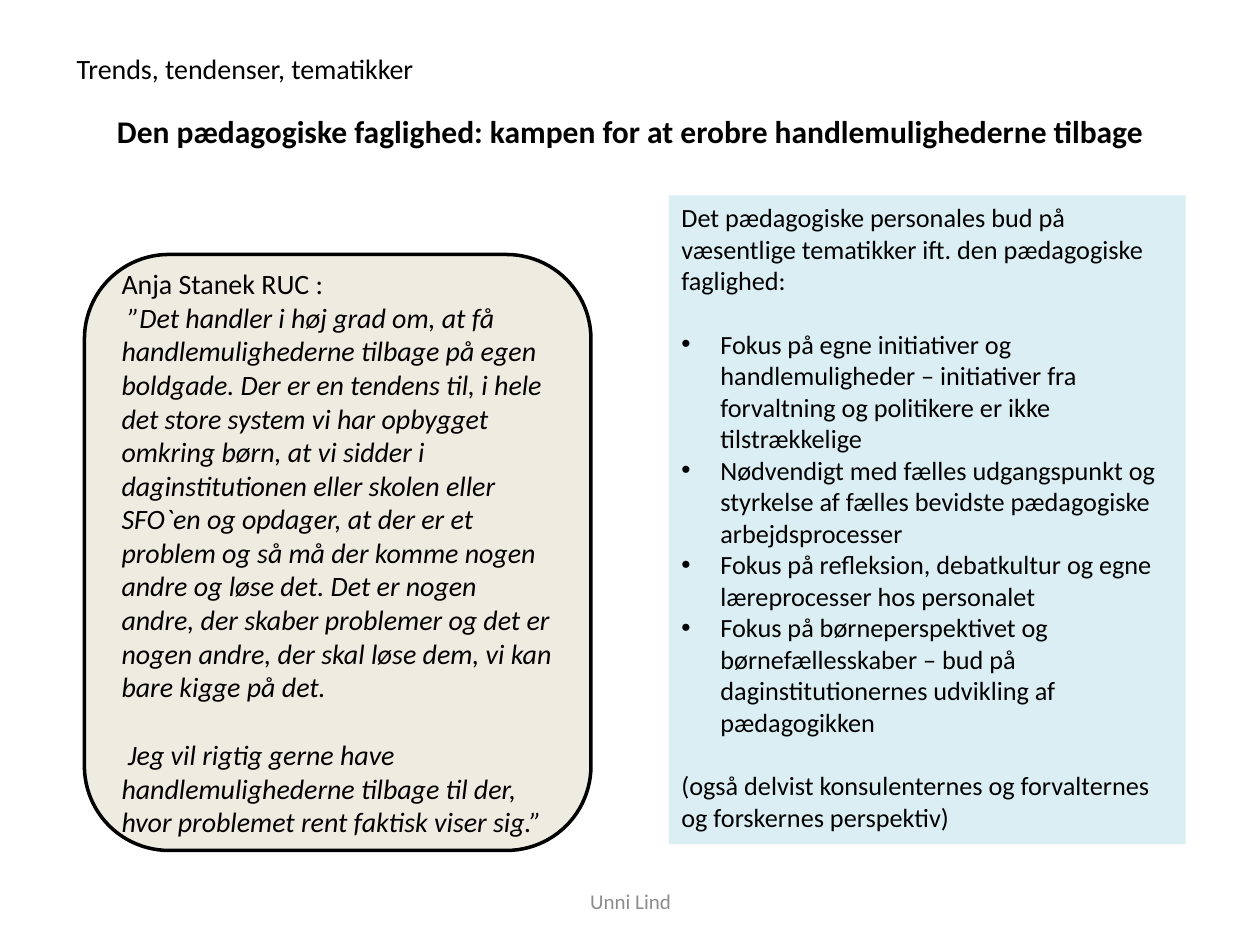
from dataclasses import dataclass

from lxml.etree import SubElement
from pptx import Presentation
from pptx.dml.color import RGBColor as Rgb
from pptx.enum.shapes import MSO_SHAPE as Shape
from pptx.enum.text import MSO_ANCHOR as Anchor, PP_ALIGN as Align
from pptx.oxml.ns import qn
from pptx.util import Emu, Inches, Pt


@dataclass(frozen=True)
class Theme:
    font: str = "Calibri"
    ink: str = "000000"
    muted: str = "8C8C8C"
    sand: str = "EEECE1"
    sky: str = "DBEEF4"
    footer: int = 12
    topics: int = 15
    body: int = 16
    heading: int = 18
    outline: int = 2
    line_height: float = 1.22
    indent: float = 0.31


@dataclass
class Para:
    text: str
    italic: bool = False
    bullet: bool = False
    gap_before: bool = False


class SlideBuilder:
    """Places elements on a grid of 100 columns by 75 rows."""

    COLUMNS, ROWS = 100, 75

    def __init__(self, deck, theme):
        self.theme = theme
        self.column = deck.slide_width / self.COLUMNS
        self.row = deck.slide_height / self.ROWS
        self.slide = deck.slides.add_slide(deck.slide_layouts[6])

    def area(self, left, top, width, height):
        return [Emu(round(count * unit)) for count, unit in
                zip((left, top, width, height), (self.column, self.row) * 2)]

    def text(self, place, paras, size, **style):
        box = self.slide.shapes.add_textbox(*self.area(*place))
        self.set_paras(box.text_frame, paras, size, **style)

    def panel(self, kind, place, fill, paras, size, outlined=False, **style):
        panel = self.slide.shapes.add_shape(kind, *self.area(*place))
        panel.shadow.inherit = False
        panel.fill.solid()
        panel.fill.fore_color.rgb = Rgb.from_string(fill)
        if outlined:
            panel.line.color.rgb = Rgb.from_string(self.theme.ink)
            panel.line.width = Pt(self.theme.outline)
        else:
            panel.line.fill.background()
        self.set_paras(panel.text_frame, paras, size, **style)

    def set_paras(self, frame, paras, size, color=None, bold=False,
                  align=Align.LEFT, anchor=Anchor.TOP):
        frame.word_wrap = True
        frame.vertical_anchor = anchor
        for index, item in enumerate(paras):
            para = frame.add_paragraph() if index else frame.paragraphs[0]
            para.alignment = align
            if item.gap_before:
                para.space_before = Pt(round(size * self.theme.line_height, 1))
            if item.bullet:
                self.add_bullet(para)
            span = para.add_run()
            span.text = item.text
            span.font.color.rgb = Rgb.from_string(color or self.theme.ink)
            formats = {"name": self.theme.font, "size": Pt(size),
                       "bold": bold, "italic": item.italic}
            for name, value in formats.items():
                setattr(span.font, name, value)

    def add_bullet(self, para):
        indent = Inches(self.theme.indent)
        properties = para._p.get_or_add_pPr()
        properties.set("marL", str(indent))
        properties.set("indent", str(-indent))
        SubElement(properties, qn("a:buFont"), typeface="Arial")
        SubElement(properties, qn("a:buChar"), char="•")


QUOTE = [
    Para("Anja Stanek RUC :"),
    Para(" ”Det handler i høj grad om, at få handlemulighederne tilbage på "
         "egen boldgade. Der er en tendens til, i hele det store system vi har "
         "opbygget omkring børn, at vi sidder i daginstitutionen eller skolen "
         "eller SFO`en og opdager, at der er et problem og så må der komme nogen "
         "andre og løse det. Det er nogen andre, der skaber problemer og det er "
         "nogen andre, der skal løse dem, vi kan bare kigge på det.", italic=True),
    Para(" Jeg vil rigtig gerne have handlemulighederne tilbage til der, hvor "
         "problemet rent faktisk viser sig.”", italic=True, gap_before=True),
]

TOPICS = [
    "Fokus på egne initiativer og handlemuligheder – initiativer fra "
    "forvaltning og politikere er ikke tilstrækkelige",
    "Nødvendigt med fælles udgangspunkt og styrkelse af fælles bevidste "
    "pædagogiske arbejdsprocesser",
    "Fokus på refleksion, debatkultur og egne læreprocesser hos personalet",
    "Fokus på børneperspektivet og børnefællesskaber – bud på "
    "daginstitutionernes udvikling af pædagogikken",
]

STAFF_VIEW = [
    Para("Det pædagogiske personales bud på væsentlige tematikker ift. den "
         "pædagogiske faglighed:"),
    *(Para(topic, bullet=True, gap_before=index == 0)
      for index, topic in enumerate(TOPICS)),
    Para("(også delvist konsulenternes og forvalternes og forskernes "
         "perspektiv)", gap_before=True),
]


def main():
    deck = Presentation()
    deck.slide_width, deck.slide_height = Inches(10), Inches(7.5)
    theme = Theme()
    page = SlideBuilder(deck, theme)

    page.text((34.2, 69.5, 31.7, 4), [Para("Unni Lind")], theme.footer,
              color=theme.muted, align=Align.CENTER, anchor=Anchor.MIDDLE)
    page.text((8.3, 8.4, 85.8, 4),
              [Para("Den pædagogiske faglighed: kampen for at erobre "
                    "handlemulighederne tilbage")], theme.heading, bold=True)
    page.text((5.1, 3.6, 91.3, 3.7), [Para("Trends, tendenser, tematikker")],
              theme.body)
    page.panel(Shape.ROUNDED_RECTANGLE, (6.7, 20.2, 40.2, 47.3), theme.sand,
               QUOTE, theme.body, outlined=True, anchor=Anchor.MIDDLE)
    page.panel(Shape.RECTANGLE, (53.1, 15.5, 41, 51.5), theme.sky,
               STAFF_VIEW, theme.topics)

    deck.save("out.pptx")


if __name__ == "__main__":
    main()
